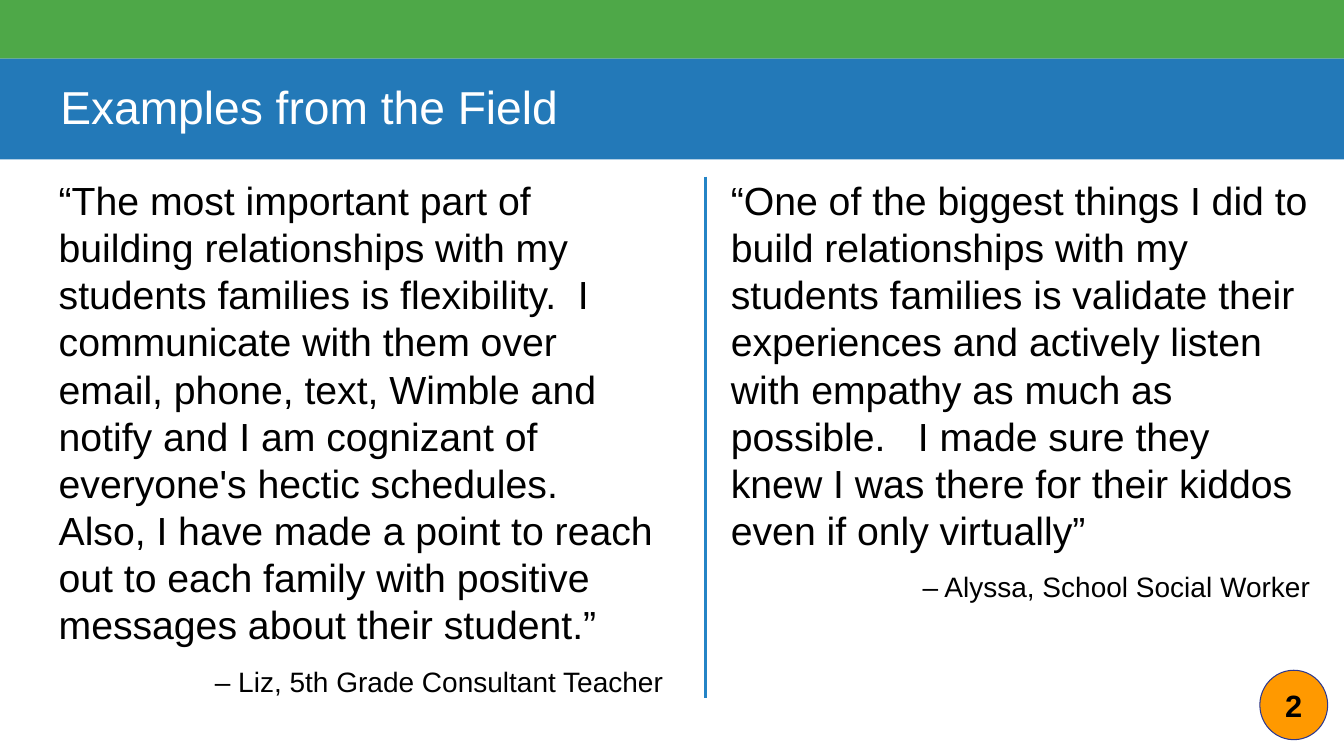
from lxml.etree import SubElement
from pptx import Presentation
from pptx.dml.color import RGBColor
from pptx.enum.shapes import MSO_CONNECTOR as Connector, MSO_SHAPE as Shape
from pptx.enum.text import MSO_ANCHOR as Anchor, PP_ALIGN as Align
from pptx.oxml.ns import qn
from pptx.util import Cm, Pt

PAGE_WIDTH, PAGE_HEIGHT = 33.87, 19.05
GREEN_HEIGHT, TITLE_HEIGHT = 1.48, 2.54
CONTENT_TOP = 4.45

QUOTES = [
    (1.48, 15.24,
     "“The most important part of building relationships with my students "
     "families is flexibility.  I communicate with them over email, phone, "
     "text, Wimble and notify and I am cognizant of everyone's hectic "
     "schedules.   Also, I have made a point to reach out to each family "
     "with positive messages about their student.”",
     "– Liz, 5th Grade Consultant Teacher"),
    (18.42, 14.6,
     "“One of the biggest things I did to build relationships with my "
     "students families is validate their experiences and actively listen "
     "with empathy as much as possible.   I made sure they knew I was there "
     "for their kiddos even if only virtually”",
     "– Alyssa, School Social Worker"),
]


def color(code):
    return RGBColor.from_string(code)


class FieldSlide:
    font = "Arial"
    black, white = "000000", "FFFFFF"
    green, blue, rule_blue = "4EA848", "2379B8", "2484C6"
    orange, navy = "FF9900", "2B3890"

    def __init__(self, deck):
        self.page = deck.slides.add_slide(deck.slide_layouts[6])

    def frame(self, shape, anchor=Anchor.TOP, side=0, edge=0):
        """Set wrapping, anchor and insets; return the text frame."""
        frame = shape.text_frame
        frame.word_wrap = True
        frame.vertical_anchor = anchor
        frame.margin_left = frame.margin_right = Cm(side)
        frame.margin_top = frame.margin_bottom = Cm(edge)
        return frame

    def add_span(self, para, text, size, ink=black, align=Align.LEFT, bold=False):
        para.alignment = align
        span = para.add_run()
        span.text = text
        span.font.name = self.font
        span.font.size = Pt(size)
        span.font.bold = bold
        span.font.color.rgb = color(ink)

    def solid(self, kind, left, top, width, height, fill, line=None):
        shape = self.page.shapes.add_shape(
            kind, Cm(left), Cm(top), Cm(width), Cm(height))
        shape.shadow.inherit = False
        shape.fill.solid()
        shape.fill.fore_color.rgb = color(fill)
        if line:
            shape.line.color.rgb = color(line)
            shape.line.width = Pt(0.75)
        else:
            shape.line.fill.background()
        return shape

    def title(self, text):
        bar = self.solid(Shape.RECTANGLE, 0, GREEN_HEIGHT, PAGE_WIDTH,
                         TITLE_HEIGHT, self.blue)
        para = self.frame(bar, Anchor.MIDDLE, side=1.52).paragraphs[0]
        para.line_spacing = 0.9
        self.add_span(para, text, 33, self.white)

    def quote(self, left, width, words, speaker):
        box = self.page.shapes.add_textbox(
            Cm(left), Cm(CONTENT_TOP), Cm(width), Cm(PAGE_HEIGHT - CONTENT_TOP))
        frame = self.frame(box)
        self.add_span(frame.paragraphs[0], words, 28)
        para = frame.add_paragraph()
        para.space_before = Pt(12)
        self.add_span(para, speaker, 20, align=Align.RIGHT)

    def divider(self, left, top, bottom):
        line = self.page.shapes.add_connector(
            Connector.STRAIGHT, Cm(left), Cm(top), Cm(left), Cm(bottom))
        line.line.color.rgb = color(self.rule_blue)
        line.line.width = Pt(2.25)
        SubElement(line._element.spPr, qn("a:effectLst"))

    def page_number(self, number):
        badge = self.solid(Shape.OVAL, 31.75, 16.89, 1.71, 1.75,
                           self.orange, self.navy)
        frame = self.frame(badge, Anchor.MIDDLE, side=0.25, edge=0.25)
        self.add_span(frame.paragraphs[0], number, 22, align=Align.CENTER,
                      bold=True)


def main():
    deck = Presentation()
    deck.slide_width, deck.slide_height = Cm(PAGE_WIDTH), Cm(PAGE_HEIGHT)
    slide = FieldSlide(deck)
    slide.solid(Shape.RECTANGLE, 0, 0, PAGE_WIDTH, GREEN_HEIGHT, slide.green)
    slide.title("Examples from the Field")
    for quote in QUOTES:
        slide.quote(*quote)
    slide.divider(17.78, CONTENT_TOP, 17.58)
    slide.page_number("2")
    deck.save("out.pptx")


if __name__ == "__main__":
    main()
